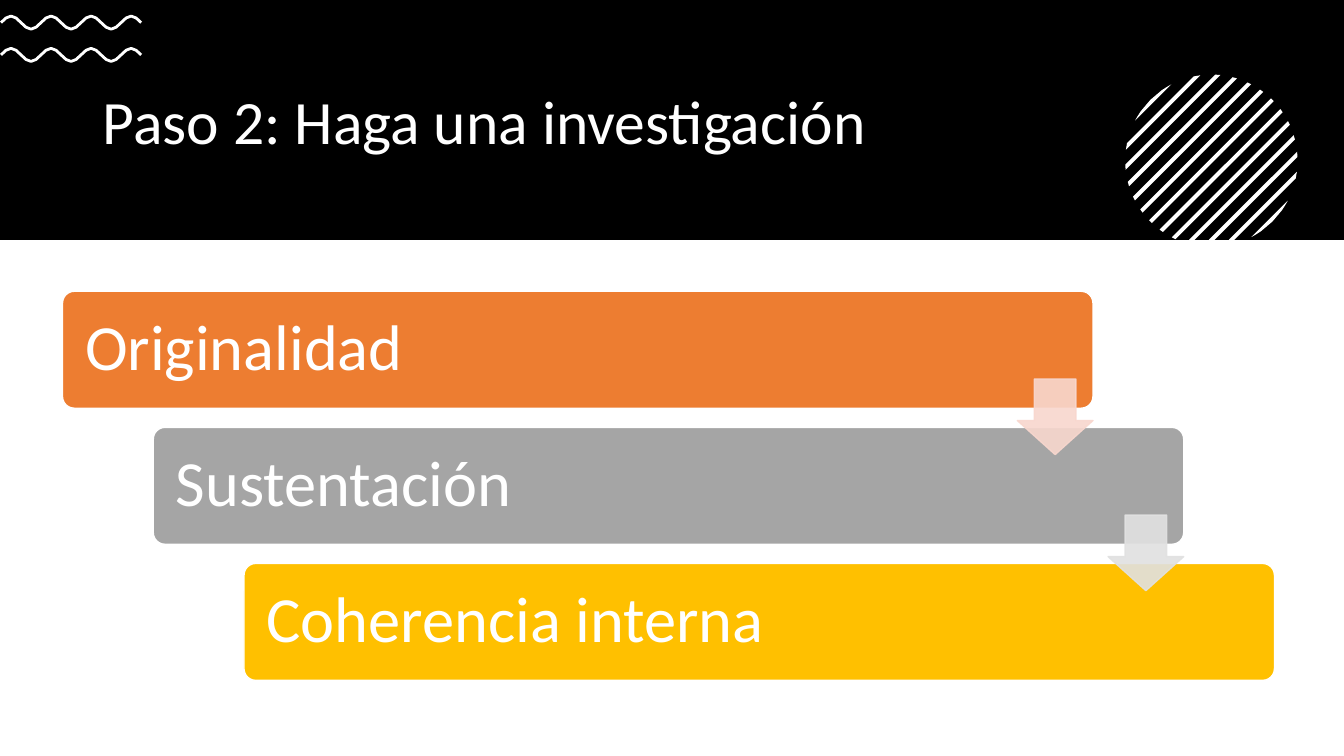
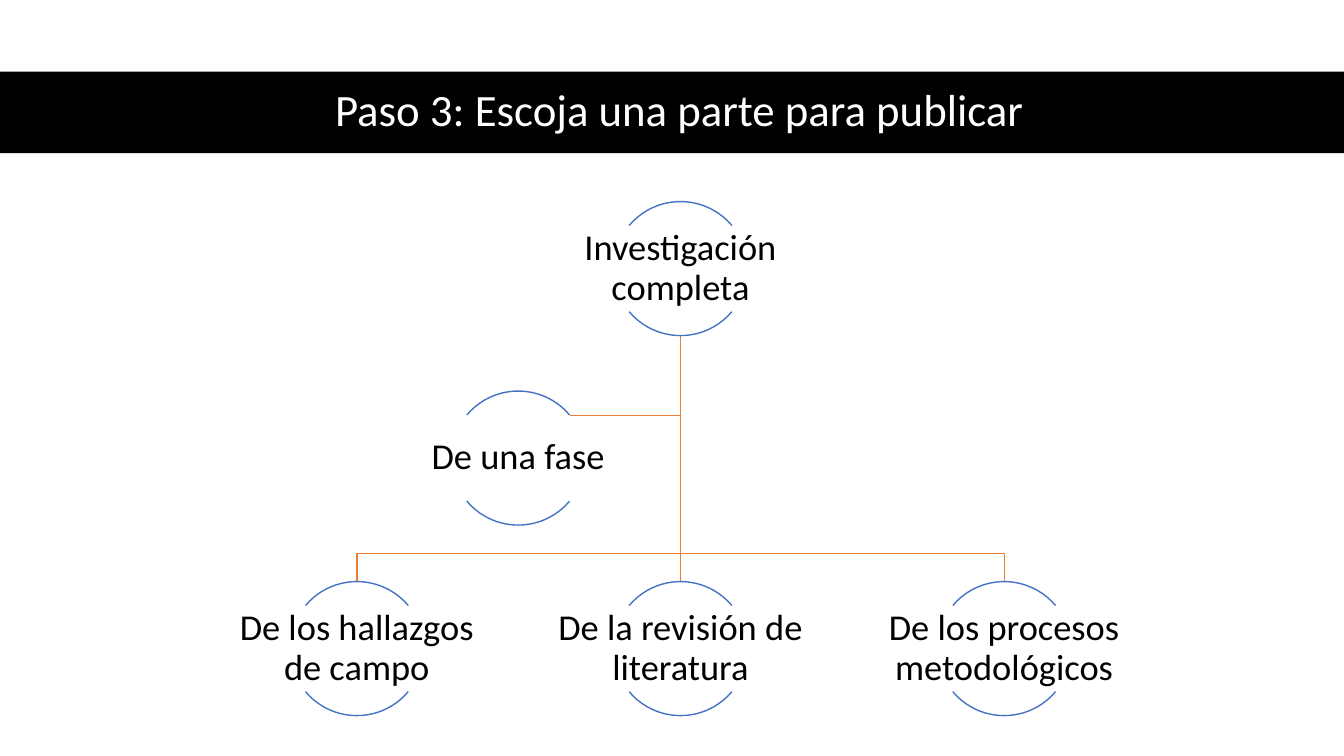
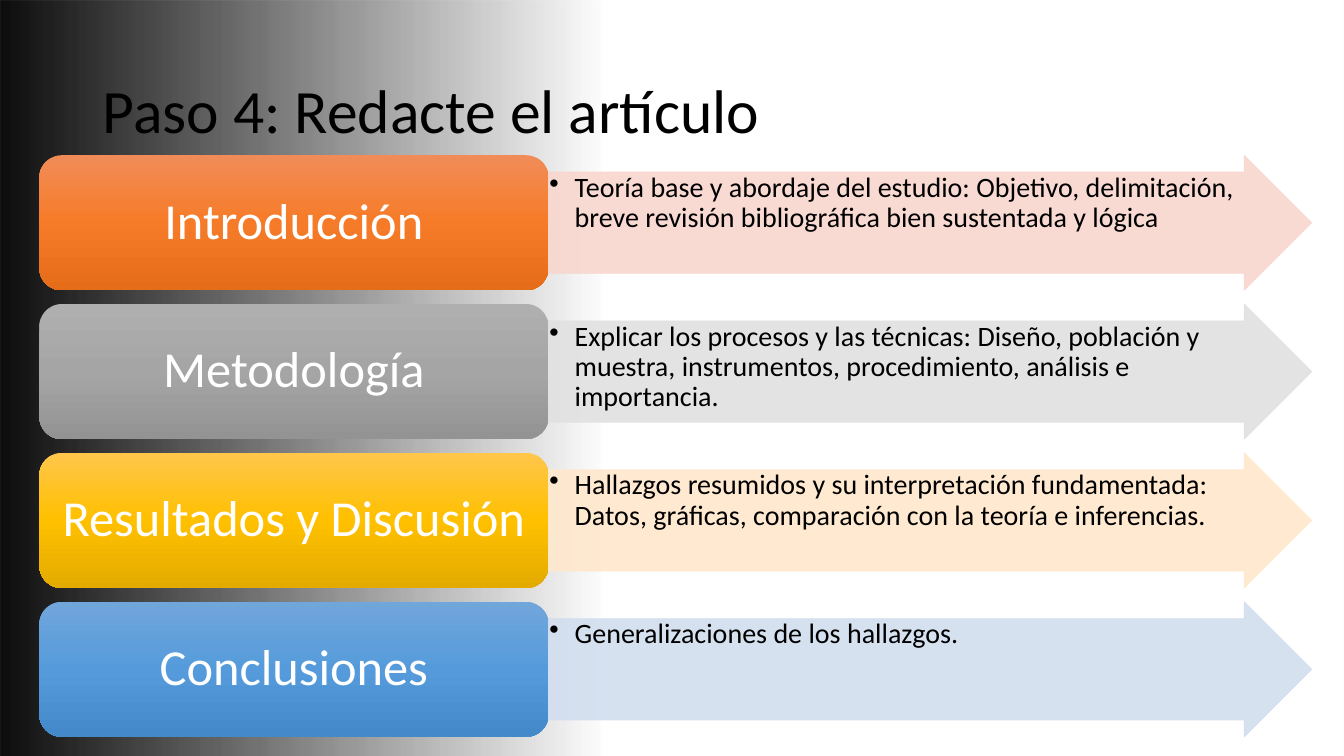
import dataclasses
import math

import lxml.etree
import pptx
import pptx.dml.color
import pptx.enum.shapes
import pptx.enum.text
import pptx.oxml.ns
import pptx.util

PX = 9144  # EMU per px, 100 px to the inch
SLIDE_W, SLIDE_H = 1333, 750
SHAPES = pptx.enum.shapes.MSO_SHAPE
ALIGN = pptx.enum.text.PP_ALIGN
ANCHOR = pptx.enum.text.MSO_ANCHOR
qn = pptx.oxml.ns.qn


@dataclasses.dataclass(frozen=True)
class Theme:
    font: str = "Calibri"
    black: str = "000000"
    white: str = "FFFFFF"
    fade: str = "0D0D0D"
    orange: str = "ED7D31"
    gray: str = "A5A5A5"
    gold: str = "FFC000"
    arc: str = "4472C4"
    pale_orange: str = "F8D7CE"
    pale_gray: str = "E1E1E1"
    pale_gold: str = "FFE8CC"
    pale_blue: str = "D2DEEF"
    orange_glow: tuple = ("F18C57", "F67B28", "E56C19")
    gray_glow: tuple = ("AFAFAF", "A5A5A5", "939393")
    gold_glow: tuple = ("FFC64B", "FFC000", "E3AB00")
    blue_glow: tuple = ("71A6DB", "559BDB", "448ACA")
    title_size: int = 44
    band_title_size: int = 32
    step_size: int = 46
    section_size: int = 36
    node_size: int = 26
    detail_size: int = 20


THEME = Theme()


def emu(px):
    return pptx.util.Emu(round(px * PX))


def rgb(color):
    return pptx.dml.color.RGBColor.from_string(color)


def sub(parent, tag, **attributes):
    return lxml.etree.SubElement(parent, qn(tag), **attributes)


def style(shape, fill=None, line=None, weight=1):
    shape.shadow.inherit = False
    if fill:
        shape.fill.solid()
        shape.fill.fore_color.rgb = rgb(fill)
    else:
        shape.fill.background()
    if line:
        shape.line.color.rgb = rgb(line)
        shape.line.width = pptx.util.Pt(weight)
    else:
        shape.line.fill.background()


def add_preset(slide, preset, box, fill=None, line=None, weight=1, adjust=()):
    shape = slide.shapes.add_shape(preset, *map(emu, box))
    style(shape, fill, line, weight)
    for index, value in enumerate(adjust):
        shape.adjustments[index] = value
    return shape


def add_outline(slide, points, closed=False, **look):
    """Draw a freeform through points given in px."""
    (x, y), *rest = [(emu(x), emu(y)) for x, y in points]
    builder = slide.shapes.build_freeform(x, y)
    builder.add_line_segments(rest, close=closed)
    style(builder.convert_to_shape(), **look)


def make_translucent(shape, percent):
    for color in shape._element.spPr.iter(qn("a:srgbClr")):
        sub(color, "a:alpha", val=str(percent * 1000))


def set_gradient(shape, stops, angle):
    """Fill with (position %, colour, opacity %) stops; angle runs counter-clockwise."""
    shape.fill.gradient()
    shape.fill.gradient_angle = angle
    stop_list = shape._element.spPr.find(qn("a:gradFill")).find(qn("a:gsLst"))
    for old_stop in list(stop_list):
        stop_list.remove(old_stop)
    for position, color, opacity in stops:
        stop = sub(stop_list, "a:gs", pos=str(position * 1000))
        sub(sub(stop, "a:srgbClr", val=color), "a:alpha", val=str(opacity * 1000))


def write(shape, text, size, color, align=ALIGN.LEFT, anchor=ANCHOR.MIDDLE,
          margins=(10, 5), bullet=False):
    frame = shape.text_frame
    frame.word_wrap = True
    frame.vertical_anchor = anchor
    frame.margin_left = frame.margin_right = emu(margins[0])
    frame.margin_top = frame.margin_bottom = emu(margins[1])
    paragraph = frame.paragraphs[0]
    paragraph.text = text
    paragraph.alignment = align
    paragraph.line_spacing = 0.9
    if bullet:
        properties = paragraph._p.get_or_add_pPr()
        properties.set("marL", str(emu(25)))
        properties.set("indent", str(-emu(25)))
        sub(properties, "a:buChar", char="•")
        # The bullet takes its size from the first run
        paragraph.runs[0].font.size = pptx.util.Pt(size)
    paragraph.font.name = THEME.font
    paragraph.font.size = pptx.util.Pt(size)
    paragraph.font.color.rgb = rgb(color)


def add_text(slide, box, *args, **kwargs):
    write(slide.shapes.add_textbox(*map(emu, box)), *args, **kwargs)


def add_band(slide, box):
    add_preset(slide, SHAPES.RECTANGLE, box, THEME.black)


def add_wave(slide, box):
    """Three and a half periods of a white wavy line."""
    left, top, width, height = box
    samples = 28
    points = []
    for sample in range(samples + 1):
        share = sample / samples
        rise = math.sin(2 * math.pi * 3.5 * share)
        points.append((left + width * share, top + height / 2 * (1 - rise)))
    add_outline(slide, points, line=THEME.white, weight=2)


def add_striped_disc(slide, box, floor):
    """Diagonal stripes clipped to the disc in box and to the floor line."""
    left, top, size = box
    radius = size / 2
    center_x, center_y = left + radius, top + radius
    reach = radius * math.sqrt(2)
    count, thickness = 13, 5.5
    pitch = (2 * reach - thickness) / (count - 1)
    for stripe in range(count):
        samples = 3 if stripe in (0, count - 1) else 1
        upper_ends, lower_ends = [], []
        for sample in range(samples + 1):
            offset = stripe * pitch + thickness * sample / samples - reach
            half = math.sqrt(max(0, 2 * radius ** 2 - offset ** 2))
            upper_ends.append((center_x + (offset + half) / 2,
                               center_y + (offset - half) / 2))
            y = min(center_y + (offset + half) / 2, floor)
            lower_ends.append((center_x + center_y + offset - y, y))
        add_outline(slide, upper_ends + lower_ends[::-1], closed=True,
                    fill=THEME.white)


def add_staircase(slide, box, steps):
    """Overlapping steps of (text, colour, colour of the arrow to the next step)."""
    left, top, width, height = box
    step_w, step_h, arrow = 1022, 116, 75
    shift = (width - step_w) // (len(steps) - 1)
    drop = (height - step_h) // (len(steps) - 1)
    for index, (text, color, _) in enumerate(steps):
        step = add_preset(
            slide, SHAPES.ROUNDED_RECTANGLE,
            (left + index * shift, top + index * drop, step_w, step_h),
            color, THEME.white, adjust=(0.1,))
        write(step, text, THEME.step_size, THEME.white, margins=(19, 19))
    for index, (_, _, color) in enumerate(steps[:-1]):
        arrow_box = (left + index * shift + step_w - arrow,
                     top + index * drop + 87, arrow, arrow)
        make_translucent(
            add_preset(slide, SHAPES.DOWN_ARROW, arrow_box, color, color,
                       adjust=(0.55, 0.45)), 90)


NODE = 133


def add_node(slide, center, top, text):
    """A label between the upper and lower arcs of a circle."""
    for start, end in ((220, 320), (40, 140)):
        add_preset(slide, SHAPES.ARC, (center - NODE / 2, top, NODE, NODE),
                   line=THEME.arc, adjust=(start * 0.6, end * 0.6))
    add_text(slide, (center - NODE, top + 24, 2 * NODE, 85), text,
             THEME.node_size, THEME.black, ALIGN.CENTER, margins=(2, 2))


def add_tree(slide, box, root, assistant, children):
    left, top, width, height = box
    center = left + width // 2
    root_bottom = top + NODE
    children_top = top + height - NODE
    bus = children_top - 28
    step = (width - 2 * NODE) // (len(children) - 1)
    child_centers = [left + NODE + i * step for i in range(len(children))]
    assistant_center, assistant_top = center - (step + 1) // 2, top + 188
    branch = assistant_top + 24

    add_outline(slide, [(center, root_bottom), (center, branch),
                        (assistant_center + 51, branch)], line=THEME.orange)
    for x in child_centers:
        bend = [] if x == center else [(center, bus), (x, bus)]
        add_outline(slide, [(center, root_bottom), *bend, (x, children_top)],
                    line=THEME.orange)
    add_node(slide, center, top, root)
    for x, text in zip(child_centers, children):
        add_node(slide, x, children_top, text)
    add_node(slide, assistant_center, assistant_top, assistant)


def add_sections(slide, box, sections):
    """Rows of (heading, gradient, detail, arrow colour)."""
    left, top, width, height = box
    row_h, heading_w = 134, 505
    pitch = (height - row_h) / (len(sections) - 1)
    for index, (heading, glow, detail, pale) in enumerate(sections):
        row_top = top + index * pitch
        arrow = add_preset(
            slide, SHAPES.RIGHT_ARROW,
            (left + heading_w, row_top, width - heading_w, row_h),
            pale, pale, 0.5, (0.75, 0.5))
        make_translucent(arrow, 90)
        write(arrow, detail, THEME.detail_size, THEME.black,
              anchor=ANCHOR.TOP, margins=(1, 1), bullet=True)
        label = add_preset(slide, SHAPES.ROUNDED_RECTANGLE,
                           (left, row_top, heading_w, row_h))
        set_gradient(label, [(50 * i, color, 100) for i, color in enumerate(glow)], 270)
        write(label, heading, THEME.section_size, THEME.white, ALIGN.CENTER,
              margins=(14, 7))


def build_research(slide):
    band_h = 238
    add_band(slide, (0, 0, SLIDE_W, band_h))
    add_text(slide, (92, 62, 1150, 123), "Paso 2: Haga una investigación",
             THEME.title_size, THEME.white)
    for top in (48, 16):
        add_wave(slide, (1, top, 139, 13))
    add_striped_disc(slide, (1116, 74, 171), band_h)
    add_staircase(slide, (62, 289, 1202, 386), [
        ("Originalidad", THEME.orange, THEME.pale_orange),
        ("Sustentación", THEME.gray, THEME.pale_gray),
        ("Coherencia interna", THEME.gold, None),
    ])


def build_selection(slide):
    add_band(slide, (0, 71, SLIDE_W, 81))
    add_text(slide, (61, 71, 1226, 81), "Paso 3: Escoja una parte para publicar",
             THEME.band_title_size, THEME.white, ALIGN.CENTER)
    add_tree(slide, (221, 200, 908, 510), "Investigación completa", "De una fase", [
        "De los hallazgos de campo",
        "De la revisión de literatura",
        "De los procesos metodológicos",
    ])


def build_writing(slide):
    fade = add_preset(slide, SHAPES.RECTANGLE, (0, 0, SLIDE_W, SLIDE_H))
    set_gradient(fade, [(0, THEME.fade, 100), (45, THEME.fade, 0)], 0)
    add_text(slide, (92, 40, 1150, 145), "Paso 4: Redacte el artículo",
             THEME.title_size, THEME.black)
    add_sections(slide, (39, 154, 1262, 577), [
        ("Introducción", THEME.orange_glow,
         "Teoría base y abordaje del estudio: Objetivo, delimitación, "
         "breve revisión bibliográfica bien sustentada y lógica",
         THEME.pale_orange),
        ("Metodología", THEME.gray_glow,
         "Explicar los procesos y las técnicas: Diseño, población y muestra, "
         "instrumentos, procedimiento, análisis e importancia.",
         THEME.pale_gray),
        ("Resultados y Discusión", THEME.gold_glow,
         "Hallazgos resumidos y su interpretación fundamentada: "
         "Datos, gráficas, comparación con la teoría e inferencias.",
         THEME.pale_gold),
        ("Conclusiones", THEME.blue_glow,
         "Generalizaciones de los hallazgos.", THEME.pale_blue),
    ])


def main():
    deck = pptx.Presentation()
    deck.slide_width, deck.slide_height = emu(SLIDE_W), emu(SLIDE_H)
    blank = deck.slide_layouts[6]
    for build in (build_research, build_selection, build_writing):
        build(deck.slides.add_slide(blank))
    deck.save("out.pptx")


if __name__ == "__main__":
    main()
